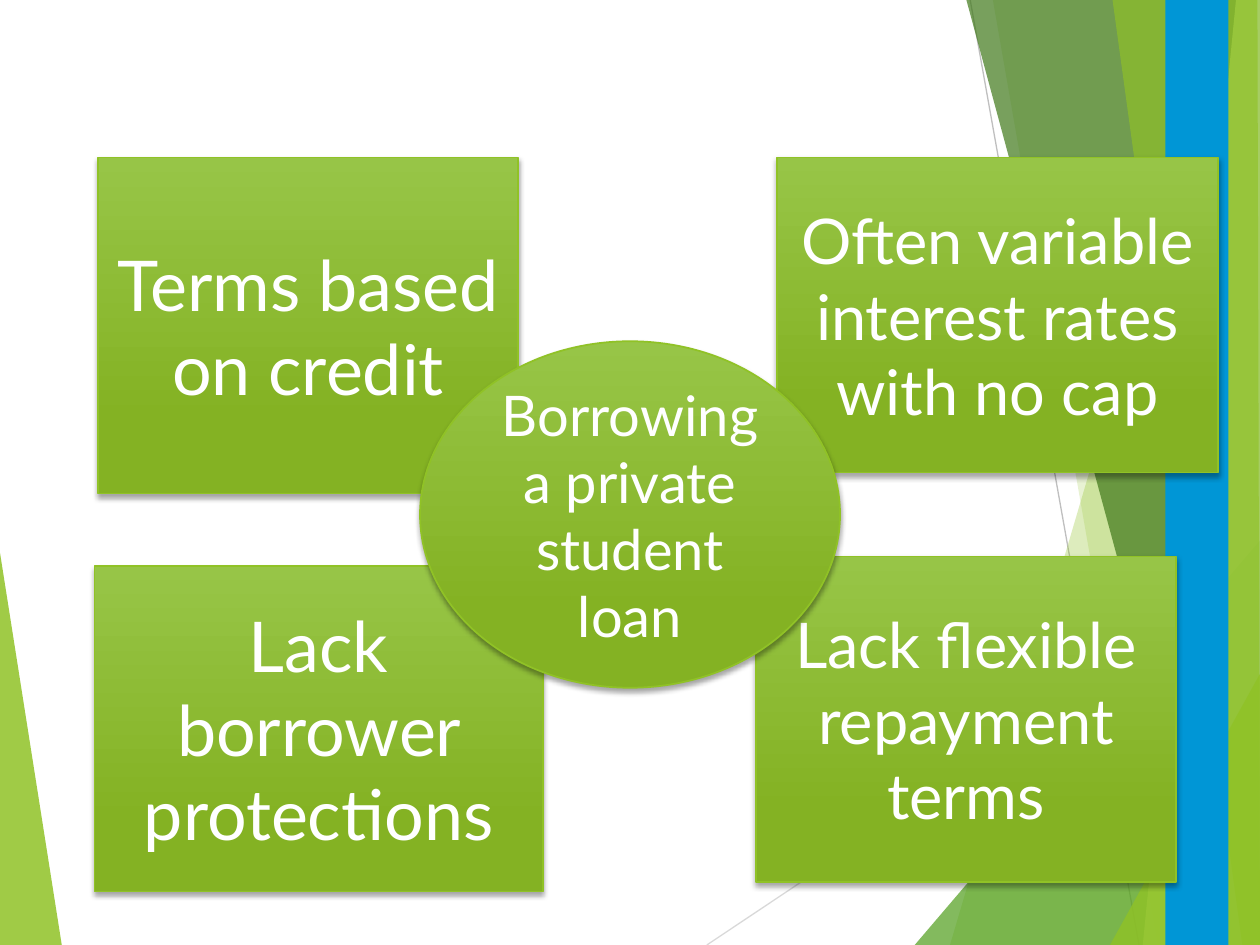
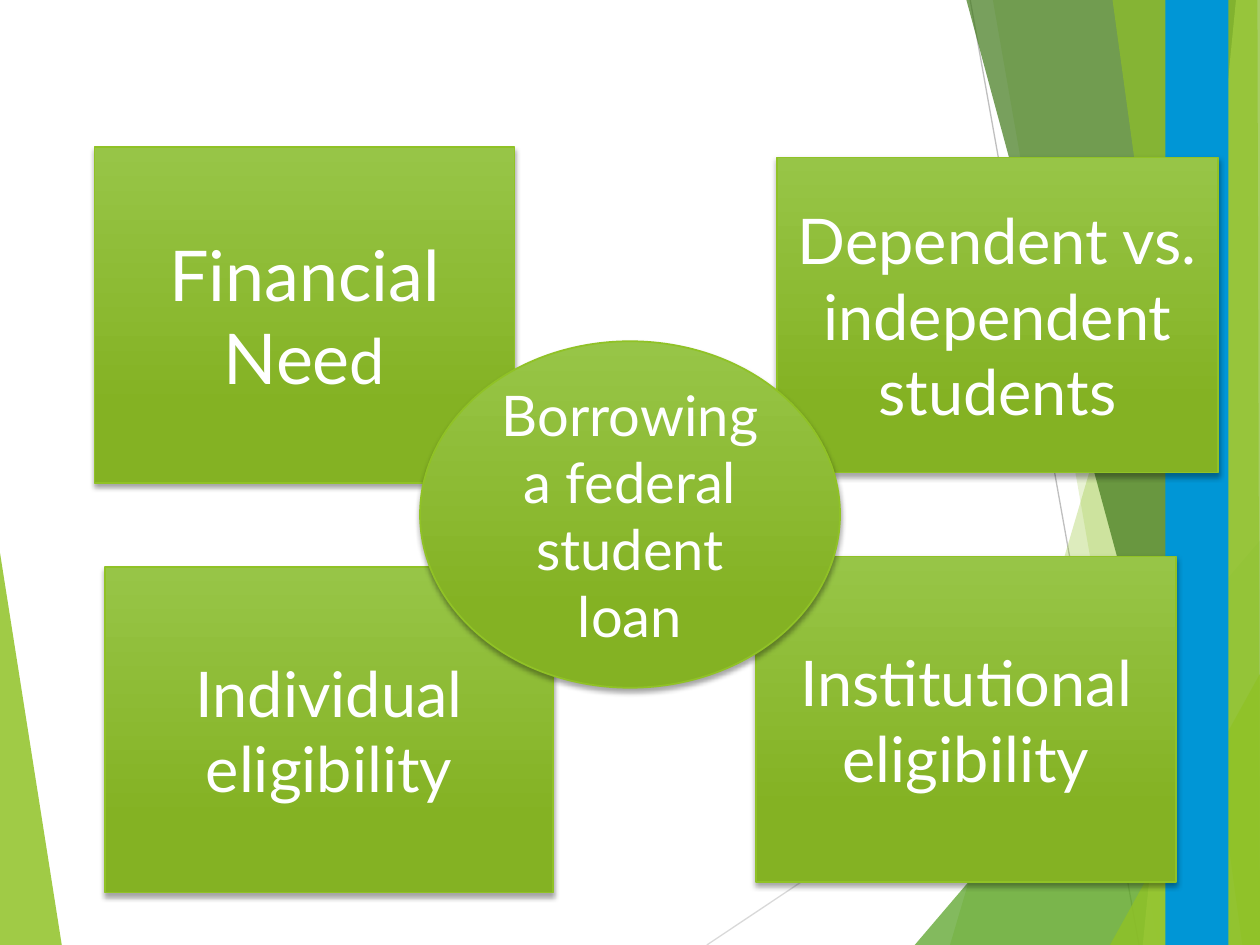
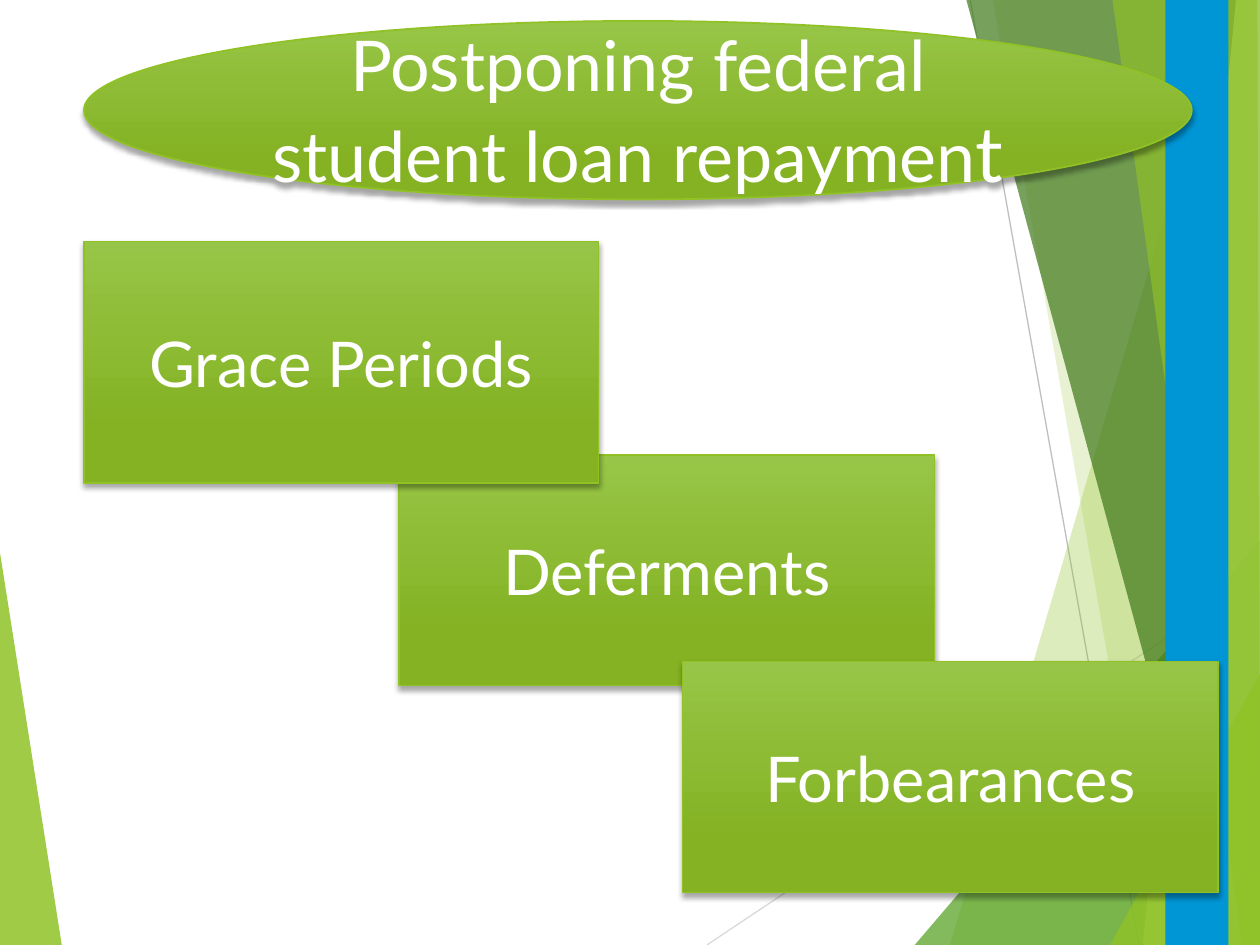
from lxml.etree import SubElement
from pptx import Presentation
from pptx.dml.color import RGBColor
from pptx.enum.shapes import MSO_CONNECTOR, MSO_SHAPE
from pptx.enum.text import MSO_ANCHOR, PP_ALIGN
from pptx.oxml.ns import qn
from pptx.util import Inches, Pt

LIME = RGBColor(0x90, 0xC2, 0x26)
LEAF = RGBColor(0x54, 0xA0, 0x21)
FOREST = RGBColor(0x3F, 0x78, 0x19)
PALE_LIME = RGBColor(0xC0, 0xE4, 0x74)
PANEL_TOP = RGBColor(0x97, 0xC5, 0x47)
PANEL_BASE = RGBColor(0x84, 0xB2, 0x23)
BLUE = RGBColor(0x00, 0x96, 0xD6)
LIGHT_GRAY = RGBColor(0xD9, 0xD9, 0xD9)
MID_GRAY = RGBColor(0xBF, 0xBF, 0xBF)
BLACK = RGBColor(0, 0, 0)
WHITE = RGBColor(0xFF, 0xFF, 0xFF)

WIDTH, HEIGHT = Inches(10), Inches(7.5)
COLUMNS, ROWS = 120, 90
FACET_SCALE = (WIDTH / 1000, HEIGHT / 1000)
FONT = {"name": "Lato", "color": WHITE}

# Corners in thousandths of the slide, colour, opacity in percent
LEFT_FACET = ([(0, 585), (49, 1000), (0, 1000)], LIME, 85)
RIGHT_FACETS = [
    ([(975, 0), (754, 1000), (1000, 1000), (1000, 0)], LIME, 30),
    ([(788, 0), (919, 1000), (1000, 1000), (1000, 0)], LIME, 20),
    ([(726, 1000), (1000, 572), (1000, 1000)], LEAF, 72),
    ([(767, 0), (970, 1000), (1000, 1000), (1000, 0)], FOREST, 70),
    ([(981, 0), (907, 1000), (1000, 1000), (1000, 0)], PALE_LIME, 70),
    ([(883, 0), (986, 1000), (1000, 1000), (998, 0)], LIME, 65),
    ([(881, 1000), (1000, 713), (1000, 1000)], LIME, 80),
]
# Start, end, colour
HAIRLINES = [
    ((561, 1000), (1000, 609), LIGHT_GRAY),
    ((770, 0), (904, 1000), MID_GRAY),
]

# Boxes are column, row, columns wide, rows high
HUB_BOX = (40, 32.5, 40, 33)
LOWER_RIGHT = (72, 53, 40, 31)
UPPER_RIGHT = (74, 15, 42, 30)
TITLE_BOX = (8, 2, 105.5, 17)


def place(box):
    column, row, wide, high = box
    return (round(column * WIDTH / COLUMNS), round(row * HEIGHT / ROWS),
            round(wide * WIDTH / COLUMNS), round(high * HEIGHT / ROWS))


def set_alpha(color_element, percent):
    SubElement(color_element, qn("a:alpha"), val=str(percent * 1000))


def add_facet(slide, corners, color, opacity):
    builder = slide.shapes.build_freeform(*corners[0], scale=FACET_SCALE)
    builder.add_line_segments(corners[1:], close=True)
    facet = builder.convert_to_shape()
    facet.shadow.inherit = False
    facet.fill.solid()
    facet.fill.fore_color.rgb = color
    facet.line.fill.background()
    set_alpha(facet._element.spPr.find(".//" + qn("a:srgbClr")), opacity)


def add_hairline(slide, start, end, color):
    points = [round(value * scale) for point in (start, end)
              for value, scale in zip(point, FACET_SCALE)]
    hairline = slide.shapes.add_connector(MSO_CONNECTOR.STRAIGHT, *points)
    hairline.line.color.rgb = color
    hairline.line.width = Pt(0.75)
    SubElement(hairline._element.spPr, qn("a:effectLst"))


def add_backdrop(slide):
    add_facet(slide, *LEFT_FACET)
    for hairline in HAIRLINES:
        add_hairline(slide, *hairline)
    for facet in RIGHT_FACETS:
        add_facet(slide, *facet)
    stripe = slide.shapes.add_shape(MSO_SHAPE.RECTANGLE, *place((111, 0, 6, ROWS)))
    stripe.shadow.inherit = False
    stripe.fill.solid()
    stripe.fill.fore_color.rgb = BLUE
    stripe.line.fill.background()


def add_soft_shadow(shape):
    shape.shadow.inherit = False
    effects = shape._element.spPr.find(qn("a:effectLst"))
    shadow = SubElement(effects, qn("a:outerShdw"), blurRad=str(Pt(3)),
                        dist=str(Pt(2)), dir=str(90 * 60000), rotWithShape="0")
    set_alpha(SubElement(shadow, qn("a:srgbClr"), val=str(BLACK)), 35)


def format_font(font, formats):
    for key, value in formats.items():
        if key == "color":
            font.color.rgb = value
        else:
            setattr(font, key, value)


def add_panel(slide, box, *runs, outline=MSO_SHAPE.RECTANGLE):
    """Add a shaded panel; each run is a text and its size in points."""
    panel = slide.shapes.add_shape(outline, *place(box))
    panel.fill.gradient()
    panel.fill.gradient_angle = 270
    stops = [(0, PANEL_TOP), (0.78, PANEL_BASE)]
    for stop, (position, color) in zip(panel.fill.gradient_stops, stops):
        stop.position = position
        stop.color.rgb = color
    panel.line.color.rgb = LIME
    panel.line.width = Pt(1)
    add_soft_shadow(panel)

    frame = panel.text_frame
    frame.word_wrap = True
    frame.vertical_anchor = MSO_ANCHOR.MIDDLE
    paragraph = frame.paragraphs[0]
    paragraph.alignment = PP_ALIGN.CENTER
    for text, size in runs:
        run = paragraph.add_run()
        run.text = text
        format_font(run.font, FONT | {"size": Pt(size)})


def add_slide(deck):
    slide = deck.slides.add_slide(deck.slide_layouts[6])
    add_backdrop(slide)
    return slide


def add_hub_slide(deck, hub, factors):
    """Add a slide with a central topic over the factors around it."""
    slide = add_slide(deck)
    for box, *runs in factors:
        add_panel(slide, box, *runs)
    add_panel(slide, HUB_BOX, (hub, 32), outline=MSO_SHAPE.OVAL)


def add_steps_slide(deck, title_runs, steps):
    slide = add_slide(deck)
    for box, option in steps:
        add_panel(slide, box, (option, 36))
    add_panel(slide, TITLE_BOX, *title_runs, outline=MSO_SHAPE.OVAL)


def main():
    deck = Presentation()
    deck.slide_width, deck.slide_height = WIDTH, HEIGHT
    add_hub_slide(deck, "Borrowing a private student loan", [
        ((9.33, 15, 40, 32), ("Terms based on credit", 40)),
        ((9, 53.9, 42.7, 31), ("Lack borrower protections", 40)),
        (LOWER_RIGHT, ("Lack flexible repayment terms", 36)),
        (UPPER_RIGHT, ("Often variable interest rates with no cap", 36)),
    ])
    add_hub_slide(deck, "Borrowing a federal student loan", [
        ((9, 14, 40, 32), ("Financial Nee", 40), ("d", 36)),
        ((10, 54, 42.7, 31), ("Individual eligibility", 36)),
        (LOWER_RIGHT, ("Institutional eligibility", 36)),
        (UPPER_RIGHT, ("Dependent vs. independent students", 36)),
    ])
    add_steps_slide(
        deck,
        [("Postponing federal student loan repaymen", 40), ("t", 44)],
        [
            ((38, 43.3, 51, 22), "Deferments"),
            ((8, 23, 49, 23), "Grace Periods"),
            ((65, 63, 51, 22), "Forbearances"),
        ],
    )
    deck.save("out.pptx")


if __name__ == "__main__":
    main()
